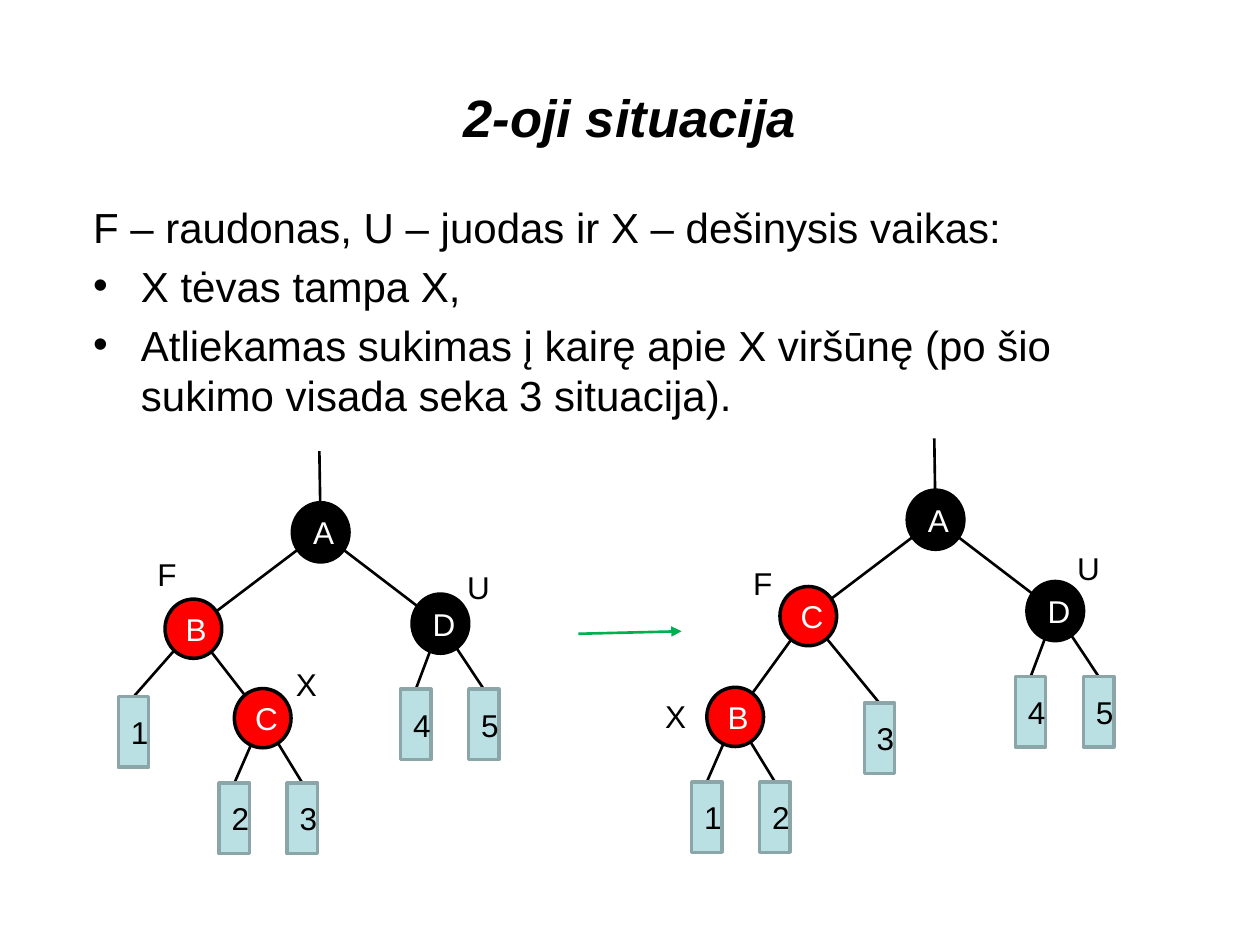
from dataclasses import dataclass

from lxml import etree
from pptx import Presentation
from pptx.dml.color import RGBColor
from pptx.enum import shapes, text
from pptx.oxml import ns
from pptx.util import Inches, Pt


@dataclass(frozen=True)
class Theme:
    font: str = "Arial"
    title: int = 30
    body: int = 24
    label: int = 18
    gap: float = 4.8
    edge: float = 1.5
    rim: float = 2
    black: str = "000000"
    white: str = "FFFFFF"
    red: str = "FF0000"
    green: str = "00B050"
    leaf: str = "BBE0E3"
    frame: str = "8AA6A8"


THEME = Theme()
WIDE, HIGH = Inches(10), Inches(7.5)
COLS, ROWS = 100, 75
DISC = (4.5, 4.7)
SLAB = (2.4, 5.6)
ROOT = (22.45, 6.45)
FATHER = (12.35, 14.1)
UNCLE = (31.95, 13.7)
PAIR = ((-2.25, 5.15), (3.15, 5.15))
COUSINS = ((30, 18.9), (35.4, 18.9))


def paint(color):
    return RGBColor.from_string(color)


def place(box, col, row):
    return round(WIDE * (box[0] + col) / COLS), round(HIGH * (box[1] + row) / ROWS)


def area(box):
    return *place(box, 0, 0), *place((0, 0), box[2], box[3])


def style(para, size, color=THEME.black, align=None):
    para.alignment = align
    para.font.name = THEME.font
    para.font.size = Pt(size)
    para.font.color.rgb = paint(color)


def bullet(para):
    props = para._p.get_or_add_pPr()
    props.set("marL", str(Inches(0.38)))
    props.set("indent", str(-Inches(0.38)))
    etree.SubElement(props, ns.qn("a:buFont"), typeface=THEME.font)
    etree.SubElement(props, ns.qn("a:buChar"), char="•")


def link(slide, box, start, end, color=THEME.black, arrow=False):
    line = slide.shapes.add_connector(
        shapes.MSO_CONNECTOR.STRAIGHT, *place(box, *start), *place(box, *end))
    line.line.color.rgb = paint(color)
    line.line.width = Pt(THEME.edge)
    if arrow:
        etree.SubElement(line.line._get_or_add_ln(), ns.qn("a:tailEnd"), type="triangle")
    etree.SubElement(line._element.spPr, ns.qn("a:effectLst"))


def solid(slide, kind, box, word, fill, rim, ink):
    item = slide.shapes.add_shape(kind, *area(box))
    item.shadow.inherit = False
    item.fill.solid()
    item.fill.fore_color.rgb = paint(fill)
    item.line.color.rgb = paint(rim)
    item.line.width = Pt(THEME.rim)
    item.text_frame.text = word
    style(item.text_frame.paragraphs[0], THEME.label, ink, text.PP_ALIGN.CENTER)


def node(slide, box, mid, word, fill):
    spot = (box[0] + mid[0] - DISC[0] / 2, box[1] + mid[1] - DISC[1] / 2, *DISC)
    solid(slide, shapes.MSO_SHAPE.OVAL, spot, word, fill, THEME.black, THEME.white)


def leaf(slide, box, top, word):
    spot = (box[0] + top[0] - SLAB[0] / 2, box[1] + top[1], *SLAB)
    solid(slide, shapes.MSO_SHAPE.RECTANGLE, spot, word, THEME.leaf, THEME.frame, THEME.black)


def label(slide, box, spot, word):
    item = slide.shapes.add_textbox(*area((box[0] + spot[0], box[1] + spot[1], 3.7, 4)))
    frame = item.text_frame
    frame.word_wrap = False
    frame.auto_size = text.MSO_AUTO_SIZE.SHAPE_TO_FIT_TEXT
    frame.text = word
    style(frame.paragraphs[0], THEME.label)


def heading(slide, box, words):
    frame = slide.shapes.add_textbox(*area(box)).text_frame
    frame.word_wrap = True
    frame.vertical_anchor = text.MSO_ANCHOR.MIDDLE
    frame.text = words
    para = frame.paragraphs[0]
    style(para, THEME.title, align=text.PP_ALIGN.CENTER)
    para.font.bold = para.font.italic = True


def body(slide, box, lead, points):
    frame = slide.shapes.add_textbox(*area(box)).text_frame
    frame.word_wrap = True
    frame.text = lead
    style(frame.paragraphs[0], THEME.body)
    for point in points:
        para = frame.add_paragraph()
        para.text = point
        bullet(para)
        para.space_before = Pt(THEME.gap)
        style(para, THEME.body)


def tree(slide, box, father, child, lone, pair, tags):
    name, inner = child
    twins = [(inner[0] + dx, inner[1] + dy) for dx, dy in PAIR]
    tops = [lone[1], *twins, *COUSINS]
    hubs = [FATHER, inner, inner, UNCLE, UNCLE]
    link(slide, box, ROOT, (ROOT[0] - 0.1, 0))
    for start, end in [(ROOT, FATHER), (ROOT, UNCLE), (FATHER, inner), *zip(hubs, tops)]:
        link(slide, box, start, end)
    node(slide, box, ROOT, "A", THEME.black)
    node(slide, box, UNCLE, "D", THEME.black)
    node(slide, box, FATHER, father, THEME.red)
    node(slide, box, inner, name, THEME.red)
    for top, word in zip(tops, lone[0] + pair + "45"):
        leaf(slide, box, top, word)
    for word, spot in tags.items():
        label(slide, box, spot, word)


def main():
    deck = Presentation()
    deck.slide_width, deck.slide_height = WIDE, HIGH
    slide = deck.slides.add_slide(deck.slide_layouts[6])
    heading(slide, (5, 3, 90, 12.5), "2-oji situacija")
    body(slide, (6.4, 15.5, 88.9, 22),
         "F – raudonas, U – juodas ir X – dešinysis vaikas:",
         ["X tėvas tampa X,",
          "Atliekamas sukimas į kairę apie X viršūnę (po šio sukimo visada seka 3 situacija)."])
    tree(slide, (3, 35.8), "B", ("C", (17.85, 21.2)), ("1", (7.6, 19.5)), "23",
         {"X": (19.5, 16.5), "U": (33.1, 8.8), "F": (8.5, 7.8)})
    link(slide, (45.9, 50.1), (0, 0.2), (8.2, 0), THEME.green, True)
    tree(slide, (51.8, 34.8), "C", ("B", (6.55, 22.1)), ("3", (18, 21)), "12",
         {"X": (0, 20), "U": (32.7, 8.3), "F": (7, 9.5)})
    deck.save("out.pptx")


if __name__ == "__main__":
    main()
